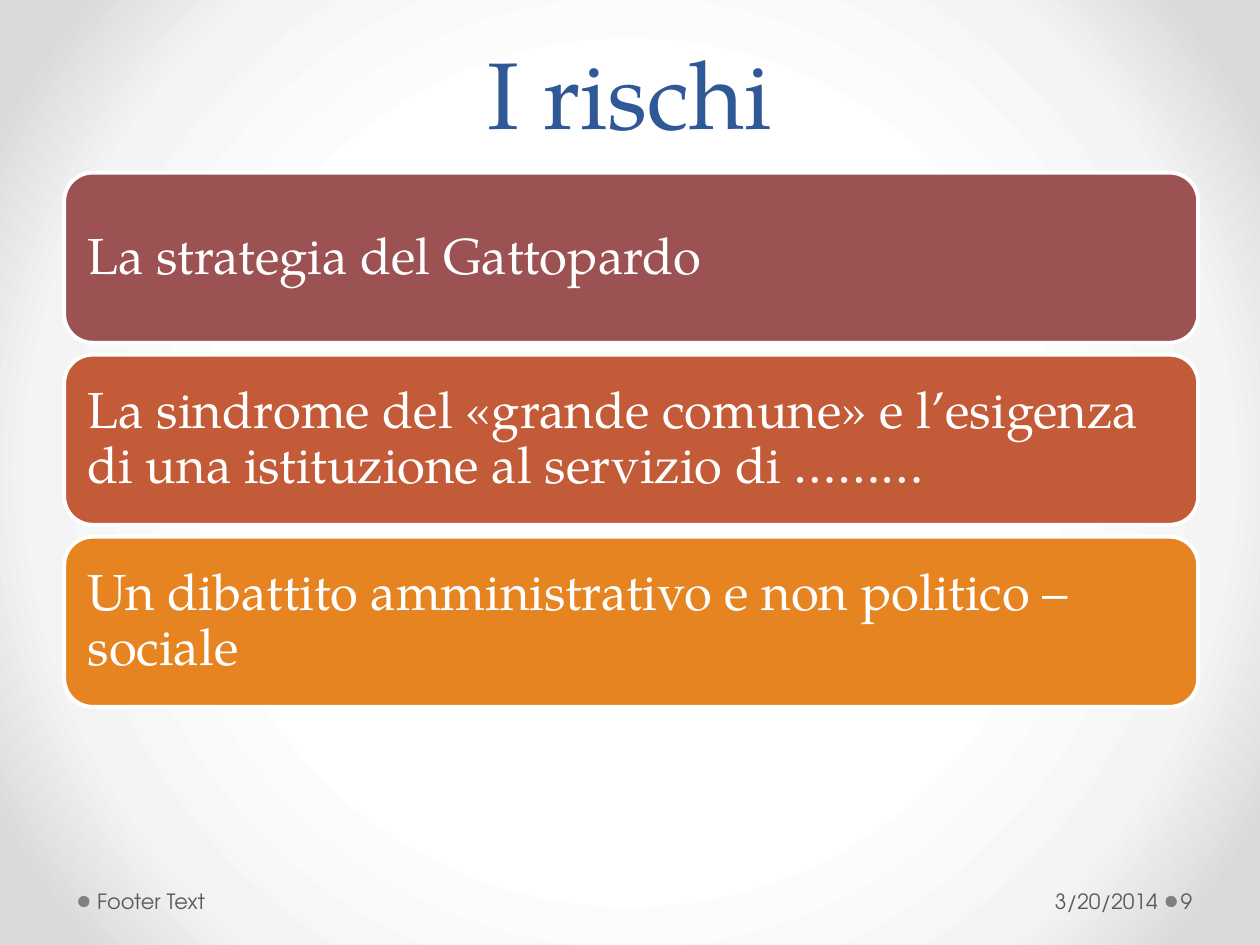
"""Build the slide "I rischi": three stacked risk panels on a radial background."""
import pptx
import pptx.dml.color
import pptx.enum.shapes
import pptx.enum.text
import pptx.oxml
import pptx.oxml.ns
import pptx.util
from pptx.util import Inches

RGBColor = pptx.dml.color.RGBColor
Align = pptx.enum.text.PP_ALIGN
Anchor = pptx.enum.text.MSO_ANCHOR
Shape = pptx.enum.shapes.MSO_SHAPE

WHITE = RGBColor(0xFF, 0xFF, 0xFF)
TITLE_BLUE = RGBColor(0x2F, 0x58, 0x97)
FOOTER_GRAY = RGBColor(0x59, 0x59, 0x59)
DOT_GRAY = RGBColor(0x80, 0x80, 0x80)
WINE = RGBColor(0x9C, 0x52, 0x52)
RUST = RGBColor(0xC3, 0x5B, 0x38)
ORANGE = RGBColor(0xE6, 0x84, 0x22)

SERIF = "TeX Gyre Pagella"
SANS = "TeX Gyre Adventor"

TITLE = "I rischi"
RISKS = [
    ("La strategia del Gattopardo", WINE),
    ("La sindrome del «grande comune» e l’esigenza di una istituzione al servizio di ………", RUST),
    ("Un dibattito amministrativo e non politico – sociale", ORANGE),
]
FOOTERS = [
    ("3/20/2014", 6.96, 2.28, Align.RIGHT, (0.1, 0.05, 0.05, 0.05)),
    ("Footer Text", 0.72, 3.11, Align.LEFT, (0.05, 0.05, 0.1, 0.05)),
    ("9", 9.34, 0.61, Align.LEFT, (0.03, 0.05, 0.05, 0.05)),
]
DOT_LEFTS = [9.25, 0.62]
DOT_TOP, DOT_SIZE = 7.11, 0.09
FOOTER_TOP, FOOTER_HEIGHT = 6.95, 0.4
PANEL_LEFT, PANEL_TOP, PANEL_WIDTH, PANEL_HEIGHT = 0.51, 1.37, 9, 1.35
PANEL_PITCH = 1.445
BACKGROUND_STOPS = [(50, "FFFFFF"), (76, "F4F4F4"), (92, "DADADA")]


def write_text(shape, text, *, font, size, color, align=Align.LEFT,
               anchor=Anchor.MIDDLE, insets=(0.1, 0.05, 0.1, 0.05), line_spacing=None):
    frame = shape.text_frame
    frame.word_wrap = True
    frame.vertical_anchor = anchor
    (frame.margin_left, frame.margin_top,
     frame.margin_right, frame.margin_bottom) = map(Inches, insets)
    paragraph = frame.paragraphs[0]
    paragraph.alignment = align
    paragraph.line_spacing = line_spacing
    run = paragraph.add_run()
    run.text = text
    run.font.name = font
    run.font.size = pptx.util.Pt(size)
    run.font.color.rgb = color


def add_filled_shape(slide, kind, box, fill):
    shape = slide.shapes.add_shape(kind, *map(Inches, box))
    shape.shadow.inherit = False
    shape.fill.solid()
    shape.fill.fore_color.rgb = fill
    shape.line.fill.background()
    return shape


def set_radial_background(slide, stops):
    slide.background.fill.gradient()
    gradient = slide.element.find(".//" + pptx.oxml.ns.qn("a:gradFill"))
    stop_xml = "".join(
        f'<a:gs pos="{position * 1000}"><a:srgbClr val="{color}"/></a:gs>'
        for position, color in stops)
    radial = pptx.oxml.parse_xml(
        f'<a:gradFill {pptx.oxml.ns.nsdecls("a")} rotWithShape="1">'
        f'<a:gsLst>{stop_xml}</a:gsLst><a:path path="circle">'
        '<a:fillToRect l="50000" t="50000" r="50000" b="50000"/></a:path></a:gradFill>')
    gradient.getparent().replace(gradient, radial)


def main():
    presentation = pptx.Presentation()
    presentation.slide_width = Inches(10)
    presentation.slide_height = Inches(7.5)
    slide = presentation.slides.add_slide(presentation.slide_layouts[6])
    set_radial_background(slide, BACKGROUND_STOPS)

    for left in DOT_LEFTS:
        add_filled_shape(slide, Shape.OVAL, (left, DOT_TOP, DOT_SIZE, DOT_SIZE), DOT_GRAY)

    title = slide.shapes.add_textbox(*map(Inches, (0.5, 0, 9, 1.23)))
    write_text(title, TITLE, font=SERIF, size=54, color=TITLE_BLUE, align=Align.CENTER,
               anchor=Anchor.BOTTOM, line_spacing=pptx.util.Pt(58))

    for index, (text, fill) in enumerate(RISKS):
        box = (PANEL_LEFT, PANEL_TOP + index * PANEL_PITCH, PANEL_WIDTH, PANEL_HEIGHT)
        panel = add_filled_shape(slide, Shape.ROUNDED_RECTANGLE, box, fill)
        panel.line.color.rgb = WHITE
        panel.line.width = pptx.util.Pt(2.25)
        write_text(panel, text, font=SERIF, size=29, color=WHITE,
                   insets=(0.12,) * 4, line_spacing=0.9)

    for text, left, width, align, insets in FOOTERS:
        footer = slide.shapes.add_textbox(
            *map(Inches, (left, FOOTER_TOP, width, FOOTER_HEIGHT)))
        write_text(footer, text, font=SANS, size=12, color=FOOTER_GRAY,
                   align=align, insets=insets)

    presentation.save("out.pptx")


if __name__ == "__main__":
    main()
